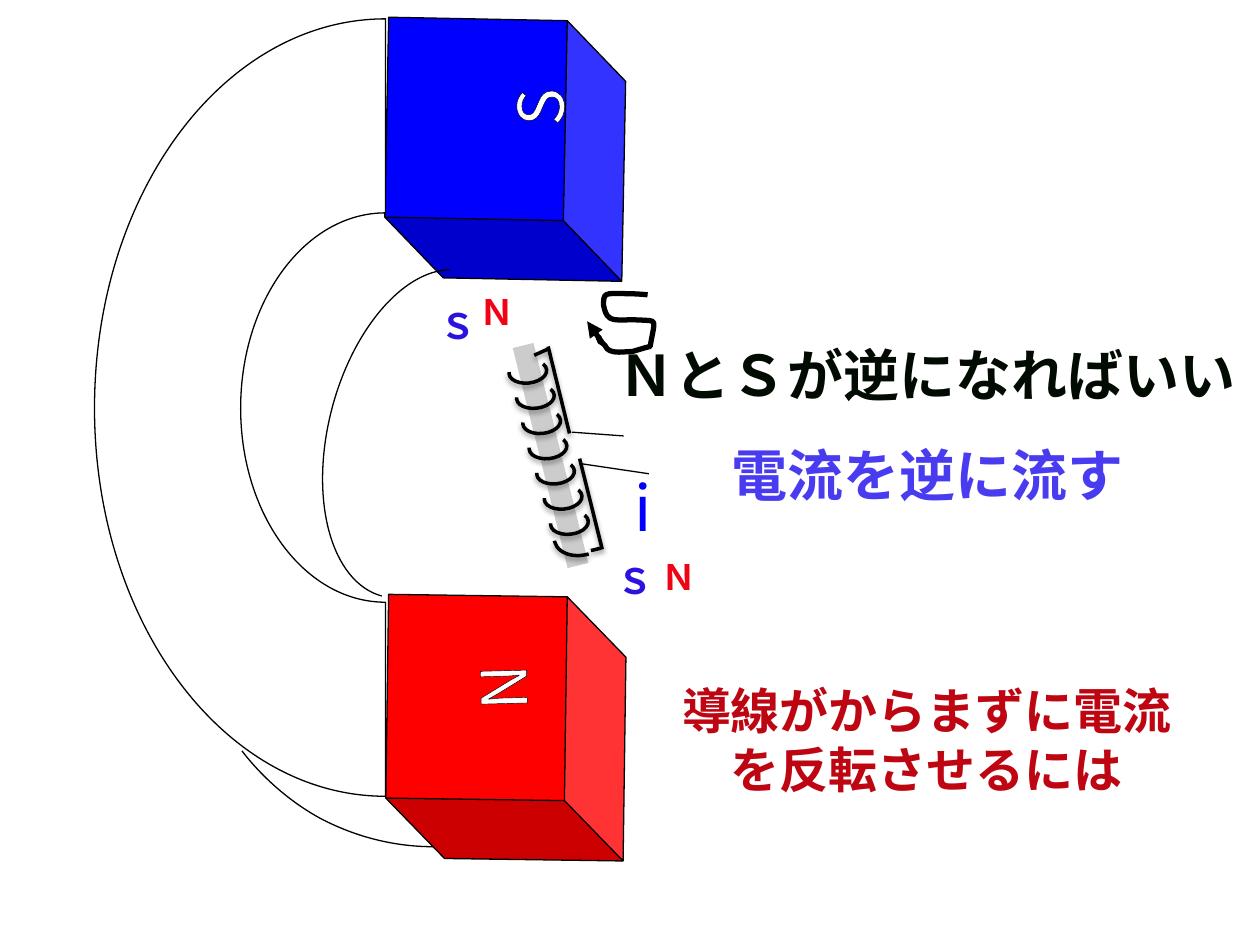
from lxml.etree import SubElement
from pptx import Presentation
from pptx.dml.color import RGBColor
from pptx.enum.shapes import MSO_CONNECTOR, MSO_SHAPE
from pptx.enum.text import MSO_ANCHOR, MSO_AUTO_SIZE, PP_ALIGN
from pptx.oxml import parse_xml
from pptx.oxml.ns import nsdecls, qn
from pptx.util import Pt

PX = 9144  # 100 px to the inch
COLORS = {
    "black": "000000", "white": "FFFFFF", "core": "CCCCCC",
    "south": "0000FF", "north": "FF0000",
    "n_mark": "EF0314", "s_mark": "2B13DF",
    "idea": "010B02", "answer": "493CF0", "question": "BE0613",
}
RGB = {name: RGBColor.from_string(value) for name, value in COLORS.items()}
CJK = "Noto Sans CJK JP"
SHADOW = (
    f'<a:effectLst {nsdecls("a")}><a:outerShdw blurRad="39370" dist="20320" dir="5400000" '
    f'rotWithShape="0"><a:srgbClr val="{COLORS["black"]}"><a:alpha val="38000"/></a:srgbClr>'
    '</a:outerShdw></a:effectLst>'
)


def add_text(box, words, size, color, outline=None, rotation=0):
    """Add a centred text box; an outline colour makes it an unwrapped letter."""
    sp = s.shapes.add_textbox(*[v * PX for v in box])
    sp.rotation = rotation
    tf = sp.text_frame
    tf.vertical_anchor = MSO_ANCHOR.TOP
    tf.word_wrap = outline is None
    tf.auto_size = MSO_AUTO_SIZE.NONE if outline else MSO_AUTO_SIZE.SHAPE_TO_FIT_TEXT
    p = tf.paragraphs[0]
    p.alignment = PP_ALIGN.CENTER
    r = p.add_run()
    r.text = words
    r.font.size = Pt(size)
    r.font.bold = outline is None
    r.font.name = CJK if outline else "Arial"
    r.font.color.rgb = RGB[color]
    rPr = r.font._element
    rPr.find(qn("a:latin")).addnext(parse_xml(f'<a:ea {nsdecls("a")} typeface="{CJK}"/>'))
    if outline:
        tf.margin_left = tf.margin_right = 0
        rPr.insert(0, parse_xml(
            f'<a:ln {nsdecls("a")} w="9525"><a:solidFill>'
            f'<a:srgbClr val="{COLORS[outline]}"/></a:solidFill></a:ln>'))


def add_curve(runs, width, fill=None):
    """Join runs of cubic knots (a start, then triples) with straight lines."""
    fb = s.shapes.build_freeform(*runs[0][0], scale=PX)
    fb.add_line_segments([knot for run in runs for knot in run][1:], close=fill is not None)
    sp = fb.convert_to_shape()
    lines = list(sp._element.iter(qn("a:lnTo")))
    first = 0
    for run in runs:
        for i in range(first, first + len(run) - 1, 3):
            cubic = parse_xml(f'<a:cubicBezTo {nsdecls("a")}/>')
            lines[i].addprevious(cubic)
            for line in lines[i:i + 3]:
                cubic.append(line[0])
                line.getparent().remove(line)
        first += len(run)
    sp.shadow.inherit = False
    if fill:
        sp.fill.solid()
        sp.fill.fore_color.rgb = RGB[fill]
    else:
        sp.fill.background()
    sp.line.color.rgb = RGB["black"]
    sp.line.width = Pt(width)


prs = Presentation()
prs.slide_width, prs.slide_height = 1000 * PX, 750 * PX
s = prs.slides.add_slide(prs.slide_layouts[6])

# Poles of the coil
for box, letter, color in [
    ((515, 436, 37, 44), "Ｎ", "n_mark"),
    ((340, 237, 39, 44), "Ｓ", "s_mark"),
    ((368, 226, 53, 44), "Ｎ", "n_mark"),
    ((480, 439, 48, 44), "Ｓ", "s_mark"),
]:
    add_text(box, letter, 20, color)

# Coil: core, end loop and seven evenly spaced turns
core = s.shapes.add_shape(MSO_SHAPE.RECTANGLE, 347 * PX, 353 * PX, 180 * PX, 17 * PX)
core.rotation = 256
core.shadow.inherit = False
core.fill.solid()
core.fill.fore_color.rgb = RGB["core"]
core.line.fill.background()

arcs = [((446, 402, 32, 45), 256, (88, 185))]
arcs += [((round(410 + 5.5 * k), 280 + 20 * k, 18, 30), 83.9, (265, 111)) for k in range(7)]
for box, rotation, angles in arcs:
    sp = s.shapes.add_shape(MSO_SHAPE.ARC, *[v * PX for v in box])
    sp.rotation = rotation
    for i, angle in enumerate(angles):
        sp.adjustments[i] = angle * 0.6
    sp._element.spPr.find(qn("a:xfrm")).set("flipV", "1")
    sp.fill.background()
    sp.line.color.rgb = RGB["black"]
    sp.line.width = Pt(2)
    sp._element.spPr.append(parse_xml(SHADOW))

# Wires of the coil
wires = [
    ((469, 437, 477, 435), 2),
    ((424, 282, 435, 277), 2),
    ((478, 436, 460, 364), 2),
    ((435, 275, 452, 344), 2),
    ((454, 343, 495, 346), 0.75),
    ((515, 376, 461, 368), 0.75),
    ((478, 272, 466, 255), 3),  # head of the turning arrow
]
for ends, width in wires:
    wire = s.shapes.add_connector(MSO_CONNECTOR.STRAIGHT, *[v * PX for v in ends])
    wire.line.color.rgb = RGB["black"]
    wire.line.width = Pt(width)
    spPr = wire._element.spPr
    if width == 2:
        spPr.append(parse_xml(SHADOW))
    else:
        SubElement(spPr, qn("a:effectLst"))
SubElement(wire.line._get_or_add_ln(), qn("a:tailEnd"), type="triangle")

# Turning arrow
add_curve([[
    (514, 234), (505, 233), (496, 233), (486, 233), (485, 233), (482, 233), (481, 234),
    (479, 235), (479, 239), (479, 242), (482, 258), (488, 253), (508, 254),
    (522, 255), (520, 252), (516, 275), (515, 276), (513, 275), (512, 276),
    (509, 277), (505, 278), (502, 279), (495, 279), (487, 281), (482, 277),
    (481, 276), (481, 275), (480, 274), (479, 273), (478, 272), (476, 271),
    (475, 267), (477, 268), (473, 268)]], 3)

# Magnet: lower edge, poles, inner edge and body
add_curve([[(192, 596), (209, 618), (231, 637), (255, 650),
            (284, 665), (316, 673), (350, 672)]], 0.75)
for box, rotation, color in [
    ((298, 24, 206, 189), 91.1, "south"),
    ((297, 483, 209, 189), 90.8, "north"),
]:
    cube = s.shapes.add_shape(MSO_SHAPE.CUBE, *[v * PX for v in box])
    cube.rotation = rotation
    cube.shadow.inherit = False
    cube.fill.solid()
    cube.fill.fore_color.rgb = RGB[color]
    cube.line.color.rgb = RGB["black"]
    cube.line.width = Pt(0.75)
add_curve([[(357, 214), (319, 215), (279, 263), (263, 326),
            (245, 397), (263, 462), (303, 473)]], 0.75)
add_curve([
    [(306, 478), (242, 478), (191, 409), (191, 324), (191, 239), (242, 169), (306, 169)],
    [(306, 15), (178, 15), (75, 153), (75, 324), (75, 494), (178, 632), (306, 632)],
], 0.75, "white")

# Letters on the magnet and the current
add_text((385, 58, 69, 54), "S", 36, "white", "black", 270)
add_text((381, 523, 67, 44), "N", 36, "white", "black", 88.5)
add_text((504, 367, 13, 33), "i", 36, "south", "white")

# Explanations
add_text((480, 265, 512, 64), "ＮとＳが逆になればいい", 32, "idea")
add_text((555, 345, 363, 64), "電流を逆に流す", 32, "answer")
add_text((529, 535, 413, 104), "導線がからまずに電流を反転させるには", 28, "question")

prs.save("out.pptx")
